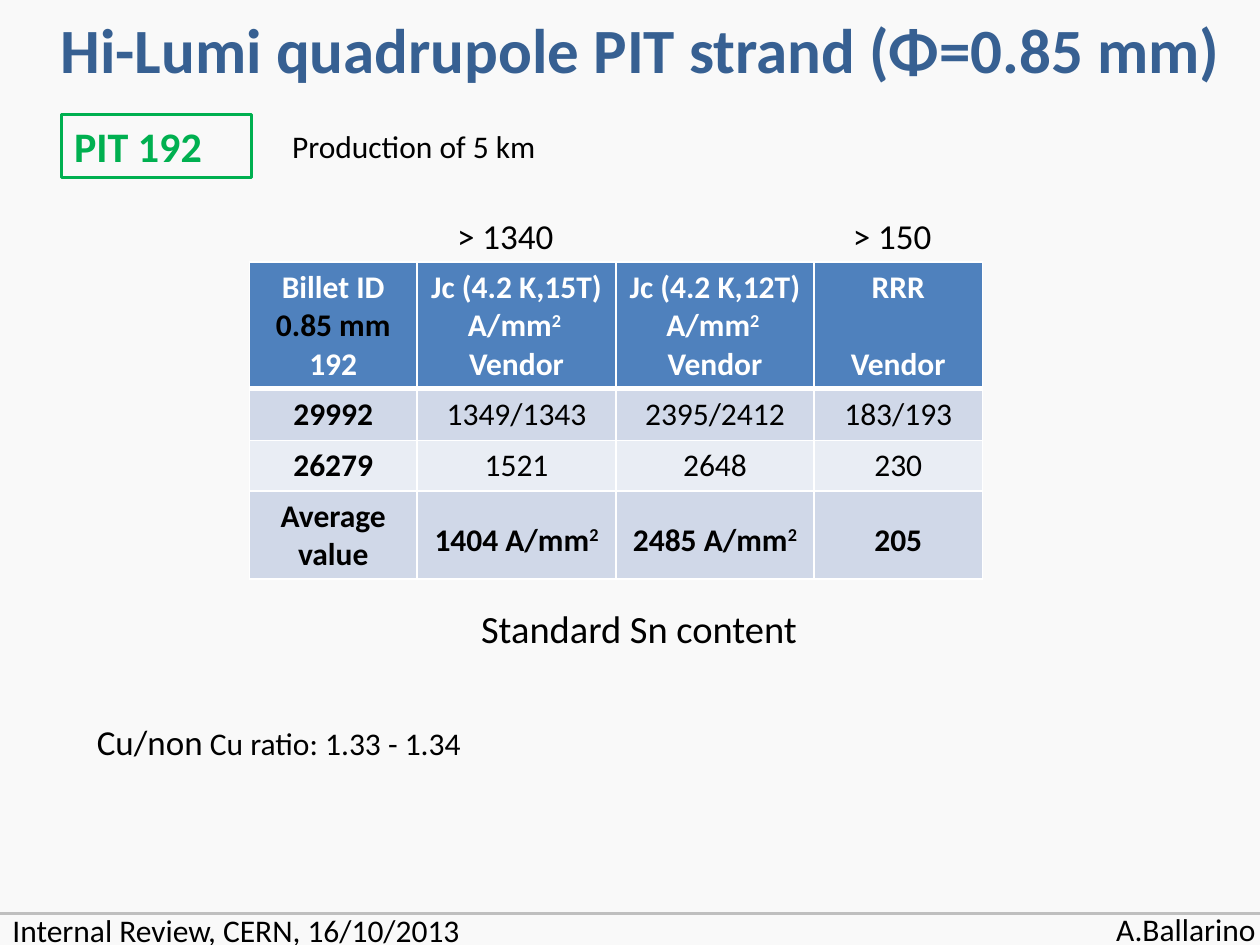
from dataclasses import dataclass

from lxml.etree import SubElement
from pptx import Presentation
from pptx.dml.color import RGBColor
from pptx.enum.shapes import MSO_CONNECTOR, MSO_SHAPE
from pptx.enum.text import MSO_ANCHOR, MSO_AUTO_SIZE, PP_ALIGN
from pptx.oxml.ns import qn
from pptx.util import Inches, Pt


@dataclass(frozen=True)
class Theme:
    font: str = "Calibri"
    background: str = "F9F9F9"
    rule: str = "BFBFBF"
    title: str = "376092"
    accent: str = "00B050"
    text: str = "000000"
    white: str = "FFFFFF"
    header: str = "4F81BD"
    bands: tuple = ("D0D8E8", "E9EDF4")
    title_size: int = 36
    tag_size: int = 24
    caption_size: int = 22
    note_size: int = 20
    body_size: int = 18


THEME = Theme()


def rgb(value):
    return RGBColor.from_string(value)


@dataclass
class Run:
    text: str
    color: str = THEME.text
    size: int = THEME.body_size
    bold: bool = False
    superscript: bool = False


class SlideBuilder:
    def __init__(self, page, theme):
        self.page = page
        self.theme = theme
        fill = page.background.fill
        fill.solid()
        fill.fore_color.rgb = rgb(theme.background)

    def add_runs(self, para, runs, align=PP_ALIGN.LEFT):
        para.alignment = align
        for run in runs:
            span = para.add_run()
            span.text = run.text
            font = span.font
            font.name = self.theme.font
            font.size = Pt(run.size)
            font.bold = run.bold
            font.color.rgb = rgb(run.color)
            if run.superscript:
                span._r.get_or_add_rPr().set("baseline", "30000")

    def text(self, left, top, width, height, *runs, wrap=False):
        box = self.page.shapes.add_textbox(
            Inches(left), Inches(top), Inches(width), Inches(height))
        frame = box.text_frame
        frame.word_wrap = wrap
        frame.auto_size = MSO_AUTO_SIZE.SHAPE_TO_FIT_TEXT
        self.add_runs(frame.paragraphs[0], runs)

    def title(self, left, top, width, height, text):
        box = self.page.shapes.add_textbox(
            Inches(left), Inches(top), Inches(width), Inches(height))
        frame = box.text_frame
        frame.word_wrap = True
        frame.vertical_anchor = MSO_ANCHOR.MIDDLE
        run = Run(text, self.theme.title, self.theme.title_size, bold=True)
        self.add_runs(frame.paragraphs[0], [run], PP_ALIGN.CENTER)

    def tag(self, left, top, width, height, text):
        """Draw an outlined, unfilled label."""
        box = self.page.shapes.add_shape(
            MSO_SHAPE.RECTANGLE, Inches(left), Inches(top), Inches(width), Inches(height))
        box.shadow.inherit = False
        box.fill.background()
        box.line.color.rgb = rgb(self.theme.accent)
        box.line.width = Pt(1.75)
        frame = box.text_frame
        frame.word_wrap = True
        frame.vertical_anchor = MSO_ANCHOR.TOP
        run = Run(text, self.theme.accent, self.theme.tag_size, bold=True)
        self.add_runs(frame.paragraphs[0], [run])

    def rule(self, left, top, right):
        line = self.page.shapes.add_connector(
            MSO_CONNECTOR.STRAIGHT, Inches(left), Inches(top), Inches(right), Inches(top))
        line.line.color.rgb = rgb(self.theme.rule)
        line.line.width = Pt(2)
        SubElement(line._element.spPr, qn("a:effectLst"))

    def borders(self, cell, **widths):
        properties = cell._tc.get_or_add_tcPr()
        for side in "LRTB":
            line = SubElement(properties, qn(f"a:ln{side}"), w=str(Pt(widths.get(side, 1))))
            fill = SubElement(line, qn("a:solidFill"))
            SubElement(fill, qn("a:srgbClr"), val=self.theme.white)

    def table(self, left, top, columns, heights, rows):
        """Each cell is a list of paragraphs, each paragraph a list of runs."""
        frame = self.page.shapes.add_table(
            len(rows), len(columns), Inches(left), Inches(top),
            Inches(sum(columns)), Inches(sum(heights)))
        table = frame.table
        for column, width in zip(table.columns, columns):
            column.width = Inches(width)
        for index, (row, height, values) in enumerate(zip(table.rows, heights, rows)):
            row.height = Inches(height)
            band = self.theme.bands[(index - 1) % 2] if index else self.theme.header
            for cell, paragraphs in zip(row.cells, values):
                self.borders(cell, T=3 if index == 1 else 1, B=1 if index else 3)
                cell.fill.solid()
                cell.fill.fore_color.rgb = rgb(band)
                body = cell.text_frame
                for number, runs in enumerate(paragraphs):
                    para = body.add_paragraph() if number else body.paragraphs[0]
                    self.add_runs(para, runs, PP_ALIGN.CENTER)
        return table


def head(text, **style):
    return Run(text, THEME.white, bold=True, **style)


def strong(text, **style):
    return Run(text, bold=True, **style)


def current_density_head(field):
    return [[head(f"Jc (4.2 K,{field}) A/mm"), head("2 ", superscript=True)],
            [head("Vendor")]]


def billet(name, *values):
    return [[[strong(name)]]] + [[[Run(value)]] for value in values]


def average_density(value):
    return [[strong(f"{value} A/mm"), strong("2", superscript=True)]]


def add_billet_table(slide):
    rows = [
        [[[head("Billet ID")], [strong("0.85 mm")], [head("192")]],
         current_density_head("15T"),
         current_density_head("12T"),
         [[head("RRR")], [head("Vendor")]]],
        billet("29992", "1349/1343", "2395/2412", "183/193"),
        billet("26279", "1521", "2648", "230"),
        [[[strong("Average value")]], average_density(1404),
         average_density(2485), [[strong("205")]]],
    ]
    table = slide.table(1.98, 2.08, [1.33, 1.58, 1.57, 1.34], [0.99, 0.41, 0.4, 0.7], rows)
    table.cell(0, 3).text_frame.paragraphs[1].space_before = Pt(22)
    for column in range(1, 4):
        table.cell(3, column).margin_top = Inches(0.24)


def main():
    deck = Presentation()
    deck.slide_width, deck.slide_height = Inches(10), Inches(7.5)
    slide = SlideBuilder(deck.slides.add_slide(deck.slide_layouts[6]), THEME)

    slide.rule(0, 7.25, 10)
    slide.text(8.76, 7.17, 1.32, 0.4, Run("A.Ballarino"))
    slide.text(0, 7.18, 3.79, 0.4, Run("Internal Review, CERN, 16/10/2013"))

    slide.tag(0.49, 0.91, 1.51, 0.5, "PIT 192")
    slide.title(-0.08, -0.42, 10.33, 1.61, "Hi-Lumi quadrupole PIT strand (Φ=0.85 mm)")
    add_billet_table(slide)

    slide.text(0.67, 5.67, 3.25, 0.44, Run("Cu/non", size=THEME.note_size),
               Run(" Cu ratio: 1.33 - 1.34"), wrap=True)
    slide.text(2.22, 0.96, 2.16, 0.4, Run("Production of 5 km"))
    slide.text(3.72, 4.75, 2.73, 0.47, Run("Standard Sn content", size=THEME.caption_size))
    for left, width, limit in ((6.67, 0.89, "> 150"), (3.53, 1.04, "> 1340")):
        slide.text(left, 1.65, width, 0.44, Run(limit, size=THEME.note_size))

    deck.save("out.pptx")


if __name__ == "__main__":
    main()
